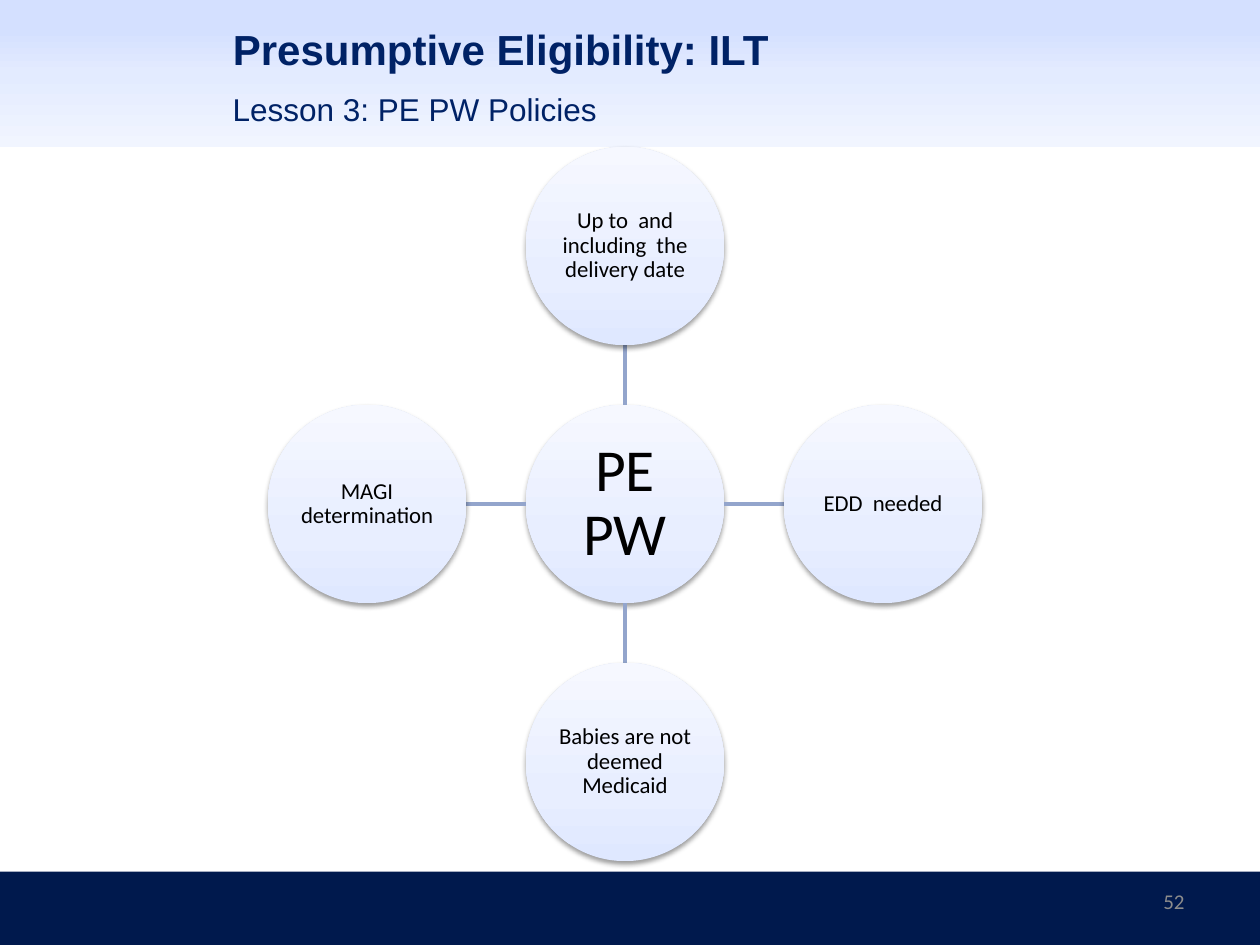
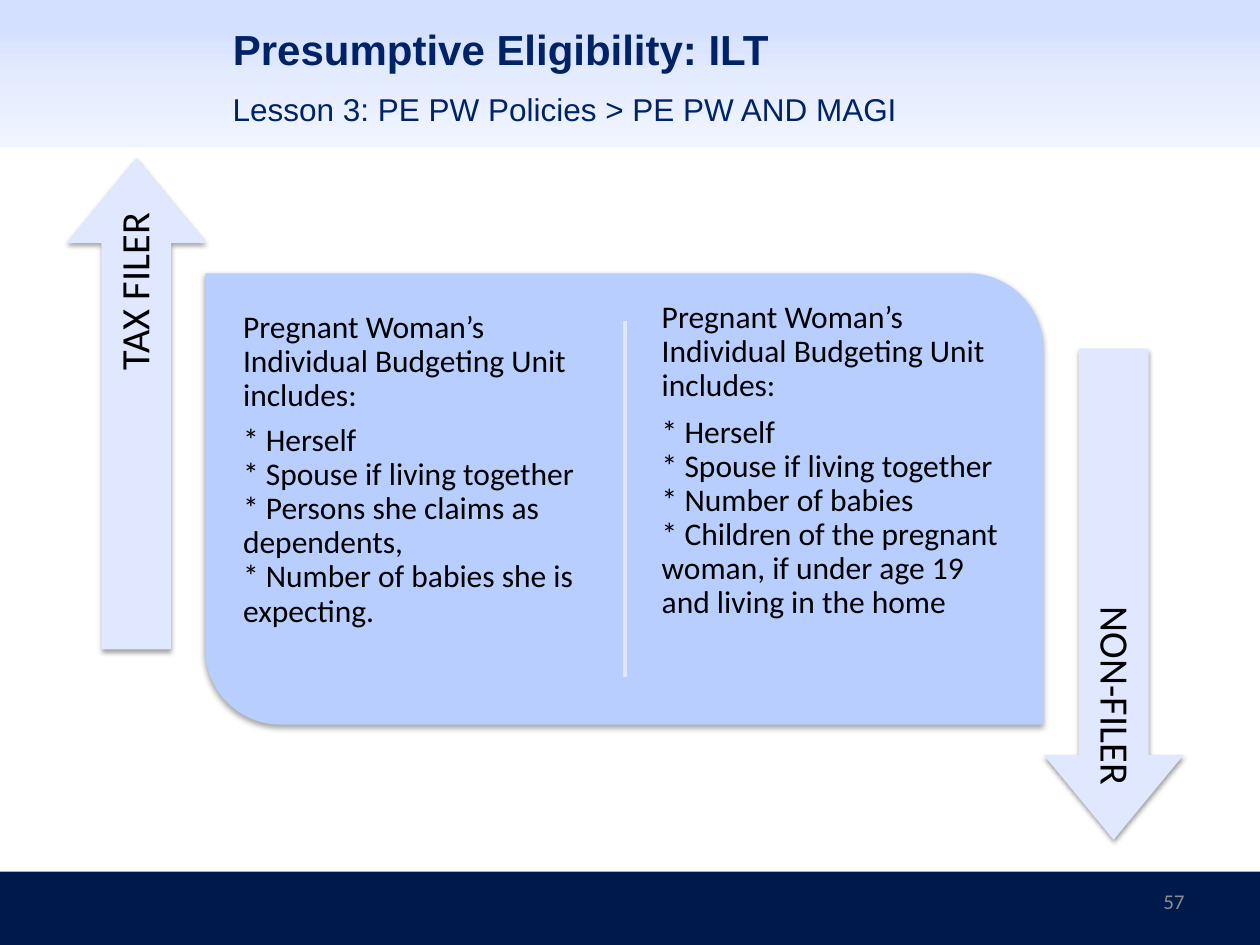
from dataclasses import dataclass

from lxml.etree import SubElement
from pptx import Presentation
from pptx.dml.color import RGBColor
from pptx.enum.shapes import MSO_CONNECTOR, MSO_SHAPE as Shape
from pptx.enum.text import MSO_ANCHOR as Anchor, MSO_AUTO_SIZE as AutoSize, PP_ALIGN as Align
from pptx.oxml.ns import qn
from pptx.util import Cm, Pt


@dataclass(frozen=True)
class Theme:
    heading_font: str = "Arial"
    body_font: str = "Calibri"
    heading: str = "002266"
    text: str = "000000"
    page_number: str = "8C8C8C"
    footer: str = "00194D"
    header: tuple = ((20, "D4E0FF"), (50, "E3EBFF"), (100, "F1F5FF"))
    circle: tuple = ((0, "DFE8FF"), (35, "E8EEFF"), (100, "F6F8FF"))
    spoke: str = "93A5CC"
    panel: str = "B8CEFF"
    pale: str = "DFE8FF"
    title_size: int = 24
    subtitle_size: int = 18
    number_size: int = 12
    hub_size: int = 34
    rim_size: int = 13
    list_size: int = 18
    arrow_size: int = 23
    line_width: int = 2


THEME = Theme()
TITLE_ONLY, TWO_CONTENT = 5, 3
SLIDE_WIDTH, SLIDE_HEIGHT = 25.4, 19.05
HEADER_HEIGHT, FOOTER_TOP = 2.96, 17.57
HEADING_LEFT, HEADING_WIDTH = 4.44, 19.69
CENTER_X = 12.6


def box(left, top, width, height):
    return Cm(left), Cm(top), Cm(width), Cm(height)


def place(shape, left, top, width, height):
    shape.left, shape.top, shape.width, shape.height = box(left, top, width, height)


def color(value):
    return RGBColor.from_string(value)


def style(paragraph, size, value=THEME.text, name=THEME.body_font, bold=False, align=None):
    font = paragraph.font
    font.size, font.name, font.bold = Pt(size), name, bold
    font.color.rgb = color(value)
    if align is not None:
        paragraph.alignment = align


def set_frame(frame, anchor, inset=None):
    frame.word_wrap = True
    frame.auto_size = AutoSize.NONE
    frame.vertical_anchor = anchor
    if inset is not None:
        frame.margin_left = frame.margin_right = Cm(inset)
        frame.margin_top = frame.margin_bottom = Cm(inset)


def fill_gradient(shape, stops, angle):
    """Fill with (percent, colour) stops; the angle runs counter-clockwise."""
    shape.fill.gradient()
    shape.fill.gradient_angle = angle
    stop_list = shape.element.spPr.find(qn("a:gradFill")).find(qn("a:gsLst"))
    for stop in list(stop_list):
        stop_list.remove(stop)
    for percent, value in stops:
        stop = SubElement(stop_list, qn("a:gs"), pos=str(percent * 1000))
        SubElement(stop, qn("a:srgbClr"), val=value)


def add_plain(slide, kind, place_box, fill=None):
    shape = slide.shapes.add_shape(kind, *place_box)
    shape.shadow.inherit = False
    shape.line.fill.background()
    if fill:
        shape.fill.solid()
        shape.fill.fore_color.rgb = color(fill)
    return shape


def drop_shadow(shape, distance=1.6, opacity=38):
    effects = shape.element.spPr.find(qn("a:effectLst"))
    shadow = SubElement(effects, qn("a:outerShdw"), blurRad=str(Pt(3.1)),
                        dist=str(Pt(distance)), dir="5400000", rotWithShape="0")
    black = SubElement(shadow, qn("a:srgbClr"), val="000000")
    SubElement(black, qn("a:alpha"), val=str(opacity * 1000))


def add_line(slide, start, end, value):
    points = [Cm(length) for length in (*start, *end)]
    line = slide.shapes.add_connector(MSO_CONNECTOR.STRAIGHT, *points)
    line.line.color.rgb = color(value)
    line.line.width = Pt(THEME.line_width)
    SubElement(line.element.spPr, qn("a:effectLst"))


def add_label(shape, text, size, inset, align):
    set_frame(shape.text_frame, Anchor.MIDDLE, inset)
    label = shape.text_frame.paragraphs[0]
    label.text = text
    label.line_spacing = 0.9
    style(label, size, align=align)


def add_master_bands(master, slide):
    """Draw the header and footer bands on a slide, then move them to the master."""
    header = add_plain(slide, Shape.RECTANGLE, box(0, 0, SLIDE_WIDTH, HEADER_HEIGHT))
    fill_gradient(header, THEME.header, 270)
    footer = add_plain(slide, Shape.RECTANGLE,
                       box(0, FOOTER_TOP, SLIDE_WIDTH, SLIDE_HEIGHT - FOOTER_TOP),
                       THEME.footer)
    tree = master.placeholders[0].element.getparent()
    for band in (header, footer):
        tree.insert(2, band.element)


def add_text(slide, text, place_box, anchor, **look):
    text_box = slide.shapes.add_textbox(*place_box)
    set_frame(text_box.text_frame, anchor)
    paragraph = text_box.text_frame.paragraphs[0]
    paragraph.text = text
    style(paragraph, **look)


def add_headings(slide, subtitle, number):
    title = slide.shapes.title
    place(title, HEADING_LEFT, 0.2, HEADING_WIDTH, 1.57)
    set_frame(title.text_frame, Anchor.MIDDLE)
    title.text_frame.text = "Presumptive Eligibility: ILT"
    style(title.text_frame.paragraphs[0], THEME.title_size, THEME.heading,
          THEME.heading_font, True, Align.LEFT)
    add_text(slide, subtitle, box(HEADING_LEFT, 1.69, HEADING_WIDTH, 1.27), Anchor.TOP,
             size=THEME.subtitle_size, value=THEME.heading, name=THEME.heading_font)
    add_text(slide, number, box(18.2, 17.65, 5.93, 1.02), Anchor.MIDDLE,
             size=THEME.number_size, value=THEME.page_number, align=Align.RIGHT)


def add_circle(slide, x, y, radius, text, size):
    circle = add_plain(slide, Shape.OVAL, box(x - radius, y - radius, 2 * radius, 2 * radius))
    fill_gradient(circle, THEME.circle, 90)
    drop_shadow(circle)
    add_label(circle, text, size, 0.03, Align.CENTER)


def add_policy_wheel(slide):
    hub_y, radius, reach = 10.16, 2, 5.2
    policies = (
        (0, -1, "Up to  and including  the delivery date"),
        (1, 0, "EDD  needed"),
        (0, 1, "Babies are not deemed Medicaid"),
        (-1, 0, "MAGI determination"),
    )
    add_circle(slide, CENTER_X, hub_y, radius, "PE PW", THEME.hub_size)
    for dx, dy, policy in policies:
        start, end = ((CENTER_X + dx * length, hub_y + dy * length)
                      for length in (radius, reach - radius))
        add_line(slide, start, end, THEME.spoke)
        add_circle(slide, CENTER_X + dx * reach, hub_y + dy * reach, radius,
                   policy, THEME.rim_size)


def fill_budget_list(column, place_box, members, lead_gap):
    """Fill a body placeholder and bring it in front of the panel."""
    column.element.getparent().append(column.element)
    place(column, *place_box)
    frame = column.text_frame
    set_frame(frame, Anchor.TOP, 0.18)
    lead = "Pregnant Woman’s Individual Budgeting Unit includes:"
    frame.text = "\n".join([lead] + [f"* {member}" for member in members])
    for paragraph in frame.paragraphs:
        properties = paragraph._p.get_or_add_pPr()
        properties.set("marL", "0")
        properties.set("indent", "0")
        SubElement(properties, qn("a:buNone"))
        paragraph.line_spacing = 0.9
        paragraph.space_before = paragraph.space_after = Pt(0)
        style(paragraph, THEME.list_size)
    frame.paragraphs[0].space_after = Pt(lead_gap)


def add_filer_arrow(slide, x, y, rotation, text):
    length, thickness = 9.9, 2.82
    arrow = add_plain(slide, Shape.RIGHT_ARROW,
                      box(x - length / 2, y - thickness / 2, length, thickness), THEME.pale)
    arrow.rotation = rotation
    arrow.adjustments[0], arrow.adjustments[1] = 0.498, 0.607
    drop_shadow(arrow)
    add_label(arrow, text, THEME.arrow_size, 0.25, Align.RIGHT)


def add_budget_comparison(slide):
    panel = add_plain(slide, Shape.ROUND_2_DIAG_RECTANGLE, box(4.14, 5.51, 16.89, 9.1),
                      THEME.panel)
    panel.adjustments[0], panel.adjustments[1] = 0, 0.167
    drop_shadow(panel, 1.8, 35)
    add_line(slide, (CENTER_X, 6.48), (CENTER_X, 13.64), THEME.pale)

    filer_column, non_filer_column = list(slide.placeholders)[1:]
    fill_budget_list(filer_column, (4.72, 6.1, 7.32, 7.37), (
        "Herself",
        "Spouse if living together",
        "Persons she claims as dependents,",
        "Number of babies she is expecting.",
    ), 6.3)
    fill_budget_list(non_filer_column, (13.16, 5.89, 7.32, 8.33), (
        "Herself",
        "Spouse if living together",
        "Number of babies",
        "Children of the pregnant woman, if under age 19 and living in the home",
    ), 7.2)
    add_filer_arrow(slide, 2.75, 8.14, 270, "TAX FILER")
    add_filer_arrow(slide, 22.45, 11.98, 90, "NON-FILER")


def main():
    deck = Presentation()
    deck.slide_width, deck.slide_height = Cm(SLIDE_WIDTH), Cm(SLIDE_HEIGHT)

    policies = deck.slides.add_slide(deck.slide_layouts[TITLE_ONLY])
    add_master_bands(deck.slide_master, policies)
    add_headings(policies, "Lesson 3: PE PW Policies", "52")
    add_policy_wheel(policies)

    budgets = deck.slides.add_slide(deck.slide_layouts[TWO_CONTENT])
    add_headings(budgets, "Lesson 3: PE PW Policies > PE PW AND MAGI", "57")
    add_budget_comparison(budgets)

    deck.save("out.pptx")


if __name__ == "__main__":
    main()
